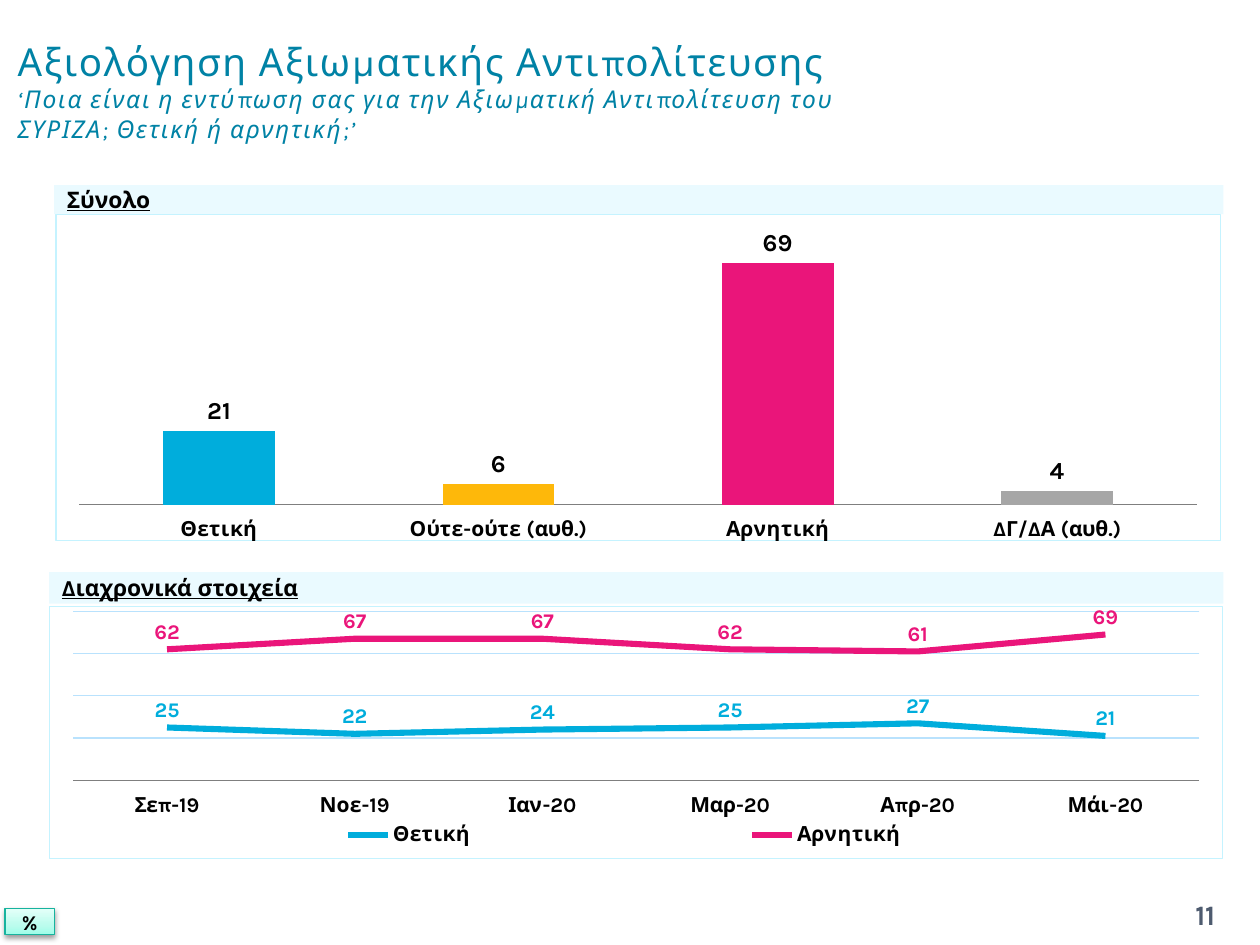
from dataclasses import dataclass, field

from pptx import Presentation
from pptx.chart.data import CategoryChartData
from pptx.dml.color import RGBColor
from pptx.enum.chart import XL_CHART_TYPE, XL_LABEL_POSITION, XL_LEGEND_POSITION, XL_TICK_LABEL_POSITION, XL_TICK_MARK
from pptx.enum.shapes import MSO_SHAPE
from pptx.enum.text import MSO_ANCHOR, MSO_AUTO_SIZE, PP_ALIGN
from pptx.oxml import parse_xml
from pptx.oxml.ns import nsdecls
from pptx.util import Inches, Pt

FONT = "Karla"
HEX = {
    "title": "0082A5", "black": "000000", "band": "C5F3FF", "grid": "B9E2FD",
    "axis": "7F7F7F", "blue": "00ADDC", "gold": "FEB80A", "pink": "EA157A",
    "grey": "A6A6A6", "teal": "16B39E", "slate": "4E5B6F",
}


@dataclass
class Plot:
    kind: XL_CHART_TYPE
    box: tuple
    inner: tuple
    cats: list
    rows: dict
    tints: list = field(default_factory=list)


BARS = Plot(
    XL_CHART_TYPE.COLUMN_CLUSTERED, (0.44, 1.7, 9.25, 2.6), (0.02, 0.03, 0.96, 0.86),
    ["Θετική", "Ούτε-ούτε (αυθ.)", "Αρνητική", "ΔΓ/ΔΑ (αυθ.)"],
    {"Series 1": (21, 6, 69, 4)}, ["blue", "gold", "pink", "grey"])
TREND = Plot(
    XL_CHART_TYPE.LINE, (0.39, 4.8, 9.32, 2.02), (0.02, 0.02, 0.96, 0.67),
    ["Σεπ-19", "Νοε-19", "Ιαν-20", "Μαρ-20", "Απρ-20", "Μάι-20"],
    {"Θετική": (25, 22, 24, 25, 27, 21), "Αρνητική": (62, 67, 67, 62, 61, 69)},
    ["blue", "pink"])


def color(key: str) -> RGBColor:
    return RGBColor.from_string(HEX[key])


def style(font, size: float, key: str = "black", bold: bool = True) -> None:
    font.name, font.size, font.bold = FONT, Pt(size), bold
    font.color.rgb = color(key)


def place(shape, box: tuple) -> None:
    shape.left, shape.top, shape.width, shape.height = map(Inches, box)


def write(shape, text: str, size: float, key: str = "black", align=PP_ALIGN.CENTER):
    """Fill a shape with one line of bold text and return its paragraph."""
    frame = shape.text_frame
    frame.text = text
    frame.word_wrap = True
    frame.auto_size = MSO_AUTO_SIZE.NONE
    frame.vertical_anchor = MSO_ANCHOR.MIDDLE
    frame.margin_top = frame.margin_bottom = 0
    para = frame.paragraphs[0]
    para.alignment = align
    para.space_before = Pt(0)
    for run in para.runs:
        style(run.font, size, key)
    return para


def band(shape, text: str) -> None:
    """Format a shape as an underlined heading on a pale strip."""
    shape.fill.solid()
    shape.fill.fore_color.rgb = color("band")
    tint = shape.fill._xPr.find(".//{*}srgbClr")
    tint.append(parse_xml(f'<a:alpha {nsdecls("a")} val="35000"/>'))
    shape.line.fill.background()
    para = write(shape, text, 13, align=PP_ALIGN.LEFT)
    props = para._p.get_or_add_pPr()
    props.set("marL", "0")
    props.set("indent", "0")
    props.append(parse_xml(f'<a:buNone {nsdecls("a")}/>'))
    if "\t" in text:
        props.append(parse_xml(
            f'<a:tabLst {nsdecls("a")}><a:tab pos="{Inches(1.14)}" algn="l"/></a:tabLst>'))
    for run in para.runs:
        run.font.underline = True


def layout(box: tuple, inner: bool = True):
    """Make a fixed chart layout from fractions of the chart size."""
    target = '<c:layoutTarget val="inner"/>' if inner else ""
    modes = "".join(f'<c:{n}Mode val="edge"/>' for n in "xy")
    sizes = "".join(f'<c:{n} val="{v}"/>' for n, v in zip("xywh", box))
    return parse_xml(f'<c:layout {nsdecls("c")}><c:manualLayout>{target}{modes}{sizes}'
                     '</c:manualLayout></c:layout>')


def draw(slide, plot: Plot):
    """Add a chart with the look that both charts share."""
    data = CategoryChartData(number_format="0")
    data.categories = plot.cats
    for name, vals in plot.rows.items():
        data.add_series(name, vals)
    chart = slide.shapes.add_chart(plot.kind, *map(Inches, plot.box), data).chart
    style(chart.font, 18, bold=False)
    chart.has_title = chart.has_legend = False
    chart.plots[0].vary_by_categories = False

    root = chart._chartSpace
    root.find("{*}chart").addnext(parse_xml(
        f'<c:spPr {nsdecls("c", "a")}><a:noFill/><a:ln w="{Pt(0.75)}"><a:solidFill>'
        f'<a:srgbClr val="{HEX["band"]}"/></a:solidFill></a:ln></c:spPr>'))
    area = root.find(".//{*}plotArea")
    for old in area.findall("{*}layout"):
        area.remove(old)
    area.insert(0, layout(plot.inner))

    cat, val = chart.category_axis, chart.value_axis
    cat.major_tick_mark = XL_TICK_MARK.NONE
    cat.tick_label_position = XL_TICK_LABEL_POSITION.LOW
    style(cat.tick_labels.font, 12)
    cat.format.line.color.rgb = color("axis")
    cat.format.line.width = Pt(0.75)
    val.minimum_scale, val.maximum_scale, val.major_unit = 0, 80, 20
    val.has_major_gridlines = val.visible = False
    return chart


def label(series, size: float, key: str, pos) -> None:
    tags = series.data_labels
    tags.show_value = True
    tags.number_format, tags.number_format_is_linked = "0", False
    tags.position = pos
    style(tags.font, size, key)


def bars(slide) -> None:
    chart = draw(slide, BARS)
    group = chart.plots[0]
    group.gap_width, group.overlap = 150, -25
    series = group.series[0]
    for i, key in enumerate(BARS.tints):
        fill = series.points[i].format.fill
        fill.solid()
        fill.fore_color.rgb = color(key)
    label(series, 14, "black", XL_LABEL_POSITION.OUTSIDE_END)


def trend(slide) -> None:
    chart = draw(slide, TREND)
    axis = chart.value_axis
    axis.has_major_gridlines = True
    axis.major_gridlines.format.line.color.rgb = color("grid")
    axis.major_gridlines.format.line.width = Pt(0.75)
    for series, key in zip(chart.plots[0].series, TREND.tints):
        series.smooth = False
        series.format.line.color.rgb = color(key)
        series.format.line.width = Pt(3.5)
        label(series, 12, key, XL_LABEL_POSITION.ABOVE)
    chart.has_legend = True
    legend = chart.legend
    legend.position = XL_LEGEND_POSITION.BOTTOM
    legend.include_in_layout = False
    style(legend.font, 12)
    for old in legend._element.findall("{*}layout"):
        legend._element.remove(old)
    legend._element.find("{*}legendPos").addnext(layout((0.02, 0.85, 0.94, 0.11), False))


def badge(slide) -> None:
    shape = slide.shapes.add_shape(MSO_SHAPE.RECTANGLE, *map(Inches, (0.04, 7.21, 0.39, 0.21)))
    shape.line.color.rgb = color("teal")
    shape.line.width = Pt(0.75)
    stops = "".join(f'<a:gs pos="{p}000"><a:srgbClr val="{c}"/></a:gs>'
                    for p, c in ((0, "9DFDE8"), (35, "BBFCED"), (100, "E4FFF9")))
    line = shape._element.spPr.find("{*}ln")
    line.addprevious(parse_xml(
        f'<a:gradFill {nsdecls("a")} rotWithShape="1"><a:gsLst>{stops}</a:gsLst>'
        '<a:lin ang="16200000" scaled="1"/></a:gradFill>'))
    line.addnext(parse_xml(
        f'<a:effectLst {nsdecls("a")}><a:outerShdw blurRad="{Pt(3.1)}" dist="{Pt(1.6)}" '
        'dir="5400000" rotWithShape="0"><a:srgbClr val="000000"><a:alpha val="38000"/>'
        '</a:srgbClr></a:outerShdw></a:effectLst>'))
    write(shape, "%", 12)


def main() -> None:
    deck = Presentation()
    deck.slide_width, deck.slide_height = Inches(10), Inches(7.5)
    slide = deck.slides.add_slide(deck.slide_layouts[1])
    title, body = slide.placeholders

    place(title, (0.04, 0.13, 6.85, 1.18))
    para = write(title, "Αξιολόγηση Αξιωματικής Αντιπολίτευσης\v‘Ποια είναι η εντύπωση σας "
                 "για την Αξιωματική Αντιπολίτευση του ΣΥΡΙΖΑ; Θετική ή αρνητική;’",
                 22, "title", PP_ALIGN.LEFT)
    for run in para.runs:
        run.font.bold = False
        run._r.get_or_add_rPr().set("spc", "100")
    query = para.runs[-1].font
    query.size, query.italic = Pt(14), True

    place(body, (0.43, 1.47, 9.28, 0.23))
    band(body, "Σύνολο\t")
    bars(slide)
    badge(slide)
    number = slide.shapes.add_textbox(*map(Inches, (9.17, 7.06, 0.79, 0.4)))
    write(number, "11", 16, "slate")
    strip = slide.shapes.add_shape(MSO_SHAPE.RECTANGLE, *map(Inches, (0.39, 4.54, 9.32, 0.25)))
    strip.shadow.inherit = False
    band(strip, "Διαχρονικά στοιχεία")
    trend(slide)
    deck.save("out.pptx")


if __name__ == "__main__":
    main()
